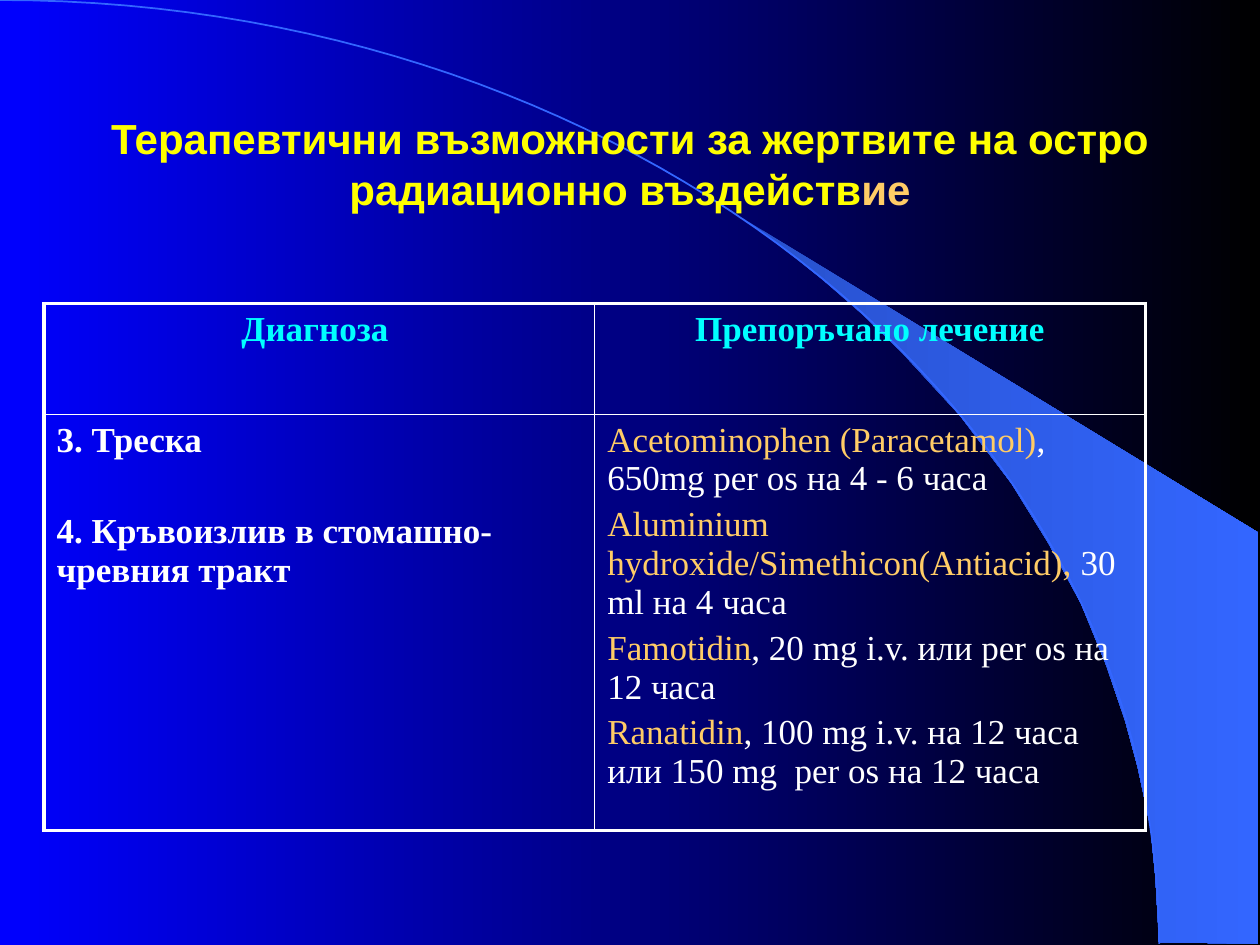
"""Build the slide on treatment options for victims of acute radiation exposure."""
from lxml.etree import fromstring
from pptx import Presentation
from pptx.dml.color import RGBColor
from pptx.enum.text import MSO_ANCHOR, PP_ALIGN
from pptx.util import Inches, Pt

COLORS = {"yellow": "FFFF00", "orange": "FFCC66", "cyan": "00FFFF", "white": "FFFFFF",
          "blue": "0000FF", "black": "000000", "blade_dark": "2851CC", "blade": "3366FF"}
NAMESPACE = "http://schemas.openxmlformats.org/drawingml/2006/main"

TITLE = [("Терапевтични възможности за жертвите на остро радиационно въздейств", "yellow"),
         ("ие", "orange")]
HEADERS = ["Диагноза ", "Препоръчано лечение"]
DIAGNOSES = ["3. Треска", "4. Кръвоизлив в стомашно-чревния тракт"]
TREATMENTS = [
    ("Acetominophen (Paracetamol)", ", 650mg per os на 4 - 6 часа"),
    ("Aluminium hydroxide/Simethicon(Antiacid),", " 30 ml на 4 часа"),
    ("Famotidin", ", 20 mg i.v. или per os на 12 часа"),
    ("Ranatidin", ", 100 mg i.v. на 12 часа или 150 mg  per os на 12 часа"),
]
COLUMN_WIDTH = 4.37
ROW_HEIGHTS = [0.88, 3.3]
THICK, THIN = 2.25, 1

BLADE = [(9.2, 7.48), (9.99, 7.49), (9.99, 4.23), (5.89, 1.73), (6.24, 1.99), (6.53, 2.22),
         (6.85, 2.5), (7.16, 2.8), (7.62, 3.3), (8.03, 3.84), (8.32, 4.31), (8.58, 4.79),
         (8.78, 5.28), (8.93, 5.72), (9.03, 6.09), (9.13, 6.56), (9.17, 6.96)]
ARC_CONTROLS = [(0, 0), (5.08, 0), (9.2, 3.35), (9.2, 7.49)]
ARC_STEPS = 60


def rgb(name):
    return RGBColor.from_string(COLORS[name])


def fill_gradient(fill, first, last):
    fill.gradient()
    fill.gradient_angle = 0
    for stop, position, name in zip(fill.gradient_stops, (0, 1), (first, last)):
        stop.position = position
        stop.color.rgb = rgb(name)


def curve_point(step):
    t = step / ARC_STEPS
    weights = ((1 - t) ** 3, 3 * t * (1 - t) ** 2, 3 * t ** 2 * (1 - t), t ** 3)
    return tuple(sum(w * p[axis] for w, p in zip(weights, ARC_CONTROLS)) for axis in (0, 1))


def add_outline(slide, points, close):
    corners = [(Inches(x), Inches(y)) for x, y in points]
    builder = slide.shapes.build_freeform(*corners[0])
    builder.add_line_segments(corners[1:], close=close)
    shape = builder.convert_to_shape()
    shape.shadow.inherit = False
    return shape


def add_backdrop(slide):
    fill_gradient(slide.background.fill, "blue", "black")
    blade = add_outline(slide, BLADE, True)
    fill_gradient(blade.fill, "blade_dark", "blade")
    blade.line.fill.background()
    arc = add_outline(slide, [curve_point(i) for i in range(ARC_STEPS + 1)], False)
    arc.fill.background()
    arc.line.color.rgb = rgb("blade")
    arc.line.width = Pt(1)


def write_paragraph(paragraph, runs, font_name, size, bold, align):
    paragraph.alignment = align
    paragraph.font.name = font_name
    paragraph.font.size = Pt(size)
    paragraph.font.bold = bold
    for text, color in runs:
        run = paragraph.add_run()
        run.text = text
        run.font.color.rgb = rgb(color)


def format_title(slide):
    title = slide.shapes.title
    title.left, title.top, title.width, title.height = map(Inches, (0.75, 0.67, 8.5, 1.25))
    title.text_frame.vertical_anchor = MSO_ANCHOR.MIDDLE
    title.text_frame.word_wrap = True
    write_paragraph(title.text_frame.paragraphs[0], TITLE, "Arial", 24, True, PP_ALIGN.CENTER)
    title.element.getparent().append(title.element)


def write_cell(cell, paragraphs, bold, align, gap):
    frame = cell.text_frame
    for index, runs in enumerate(paragraphs):
        paragraph = frame.add_paragraph() if index else frame.paragraphs[0]
        write_paragraph(paragraph, runs, "Times New Roman", 20, bold, align)
        paragraph.space_before = Pt(gap if index else 4)


def set_borders(cell, widths):
    properties = cell._tc.get_or_add_tcPr()
    for index, (side, width) in enumerate(widths.items()):
        properties.insert(index, fromstring(
            f'<a:ln{side} xmlns:a="{NAMESPACE}" w="{Pt(width)}"><a:solidFill>'
            f'<a:srgbClr val="{COLORS["white"]}"/></a:solidFill></a:ln{side}>'))


def add_treatment_table(slide):
    frame = slide.shapes.add_table(2, 2, Inches(0.35), Inches(2.41),
                                   Inches(2 * COLUMN_WIDTH), Inches(sum(ROW_HEIGHTS)))
    table = frame.table
    table.first_row = table.horz_banding = False
    for column in table.columns:
        column.width = Inches(COLUMN_WIDTH)
    for row, height in zip(table.rows, ROW_HEIGHTS):
        row.height = Inches(height)
    for index, header in enumerate(HEADERS):
        write_cell(table.cell(0, index), [[(header, "cyan")]], True, PP_ALIGN.CENTER, 4)
    write_cell(table.cell(1, 0), [[(text, "white")] for text in DIAGNOSES],
               True, PP_ALIGN.LEFT, 30)
    write_cell(table.cell(1, 1), [[(drug, "orange"), (dose, "white")] for drug, dose in TREATMENTS],
               False, PP_ALIGN.LEFT, 4)
    for row in range(2):
        for column in range(2):
            cell = table.cell(row, column)
            cell.fill.background()
            set_borders(cell, {"L": THIN if column else THICK, "R": THICK if column else THIN,
                               "T": THIN if row else THICK, "B": THICK if row else THIN})


def main():
    presentation = Presentation()
    presentation.slide_width, presentation.slide_height = Inches(10), Inches(7.5)
    slide = presentation.slides.add_slide(presentation.slide_layouts[5])
    add_backdrop(slide)
    format_title(slide)
    add_treatment_table(slide)
    presentation.save("out.pptx")


if __name__ == "__main__":
    main()
